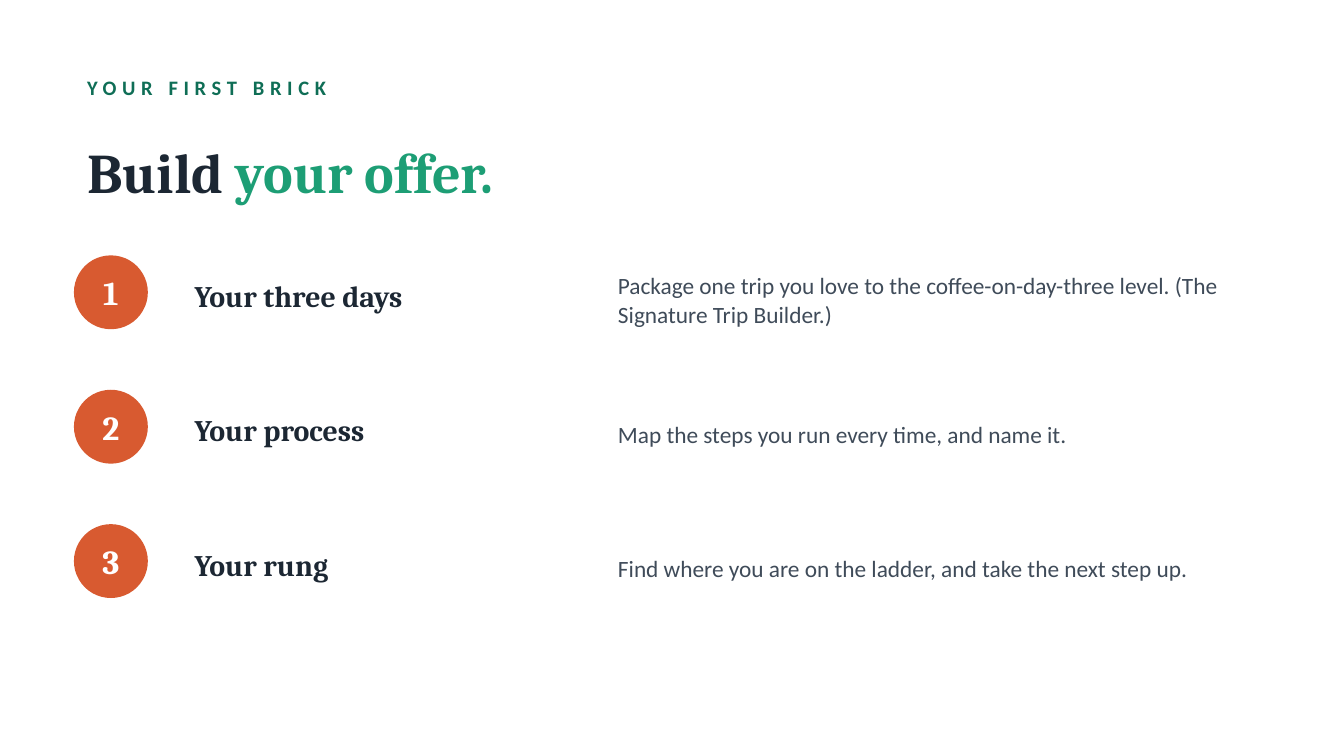
from pptx import Presentation
from pptx.dml.color import RGBColor
from pptx.enum.shapes import MSO_SHAPE
from pptx.enum.text import MSO_ANCHOR, MSO_AUTO_SIZE, PP_ALIGN
from pptx.util import Inches, Pt

OVAL = MSO_SHAPE.OVAL
MIDDLE = MSO_ANCHOR.MIDDLE
FIXED = MSO_AUTO_SIZE.NONE
LEFT, CENTER = PP_ALIGN.LEFT, PP_ALIGN.CENTER

COLORS = {
    "ink": "1C2733",
    "body": "3F4B59",
    "pine": "0F6E56",
    "green": "1D9E75",
    "rust": "D85A30",
    "white": "FFFFFF",
}

FORMATS = {
    "label": {"name": "Calibri", "size": Pt(11), "bold": True},
    "title": {"name": "Cambria", "size": Pt(30), "bold": True},
    "number": {"name": "Cambria", "size": Pt(18), "bold": True},
    "head": {"name": "Cambria", "size": Pt(16), "bold": True},
    "body": {"name": "Calibri", "size": Pt(12.5), "bold": False},
}

STEPS = [
    ("Your three days",
     "Package one trip you love to the coffee-on-day-three level. "
     "(The Signature Trip Builder.)"),
    ("Your process", "Map the steps you run every time, and name it."),
    ("Your rung", "Find where you are on the ladder, and take the next step up."),
]
WIDTH = Inches(10)
HEIGHT = WIDTH * 9 // 16
TOP, PITCH = 1.9, 1


def color(key):
    return RGBColor.from_string(COLORS[key])


def write(shape, style, parts, align=LEFT):
    frame = shape.text_frame
    values = {"word_wrap": True, "auto_size": FIXED, "vertical_anchor": MIDDLE}
    for key, value in values.items():
        setattr(frame, key, value)
    para = frame.paragraphs[0]
    para.alignment = align
    for text, tone in parts:
        run = para.add_run()
        run.text = text
        for key, value in FORMATS[style].items():
            setattr(run.font, key, value)
        run.font.color.rgb = color(tone)
    return para


def add_text(slide, box, style, text, tone):
    shape = slide.shapes.add_textbox(*map(Inches, box))
    return write(shape, style, [(text, tone)])


def add_title(slide):
    title = slide.shapes.title
    place = {"left": 0.55, "top": 0.85, "width": 8.9, "height": 0.85}
    for key, value in place.items():
        setattr(title, key, Inches(value))
    write(title, "title", [("Build ", "ink"), ("your offer.", "green")])


def add_label(slide):
    para = add_text(slide, (0.55, 0.5, 8.9, 0.3), "label",
                    "YOUR FIRST BRICK", "pine")
    para.runs[0].font._element.set("spc", "300")


def add_badge(slide, top, number):
    badge = slide.shapes.add_shape(
        OVAL, *map(Inches, (0.55, top, 0.55, 0.55)))
    badge.shadow.inherit = False
    badge.fill.solid()
    badge.fill.fore_color.rgb = color("rust")
    badge.line.fill.background()
    for side in ("left", "right", "top", "bottom"):
        setattr(badge.text_frame, f"margin_{side}", 0)
    write(badge, "number", [(str(number), "white")], CENTER)


def add_step(slide, index, head, body):
    top = TOP + index * PITCH
    add_badge(slide, top, index + 1)
    add_text(slide, (1.35, top - 0.05, 3, 0.7), "head", head, "ink")
    para = add_text(slide, (4.5, top - 0.05, 5, 0.75), "body", body, "body")
    para.line_spacing = 1.05


def main():
    deck = Presentation()
    deck.slide_width, deck.slide_height = WIDTH, HEIGHT
    slide = deck.slides.add_slide(deck.slide_layouts[5])
    slide.background.fill.solid()
    slide.background.fill.fore_color.rgb = color("white")
    add_label(slide)
    add_title(slide)
    for index, (head, body) in enumerate(STEPS):
        add_step(slide, index, head, body)
    deck.save("out.pptx")


if __name__ == "__main__":
    main()
